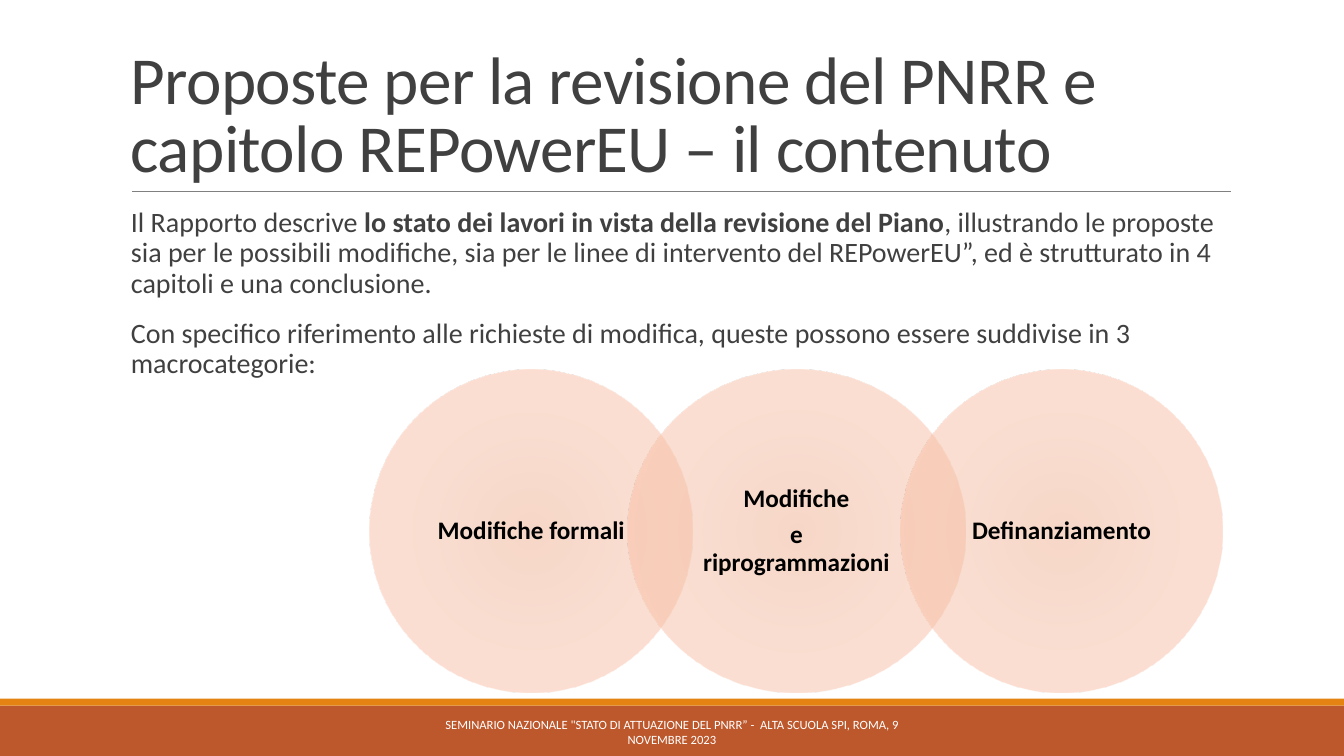
"""Build the slide on the PNRR revision proposals, with three overlapping categories."""
from math import sqrt

from lxml.etree import SubElement
from pptx import Presentation
from pptx.dml.color import RGBColor
from pptx.enum.shapes import MSO_CONNECTOR, MSO_SHAPE
from pptx.enum.text import MSO_ANCHOR, PP_ALIGN
from pptx.oxml import parse_xml
from pptx.oxml.ns import nsdecls, qn
from pptx.util import Inches, Pt

TITLE = [[("Proposte per la revisione del PNRR e capitolo REPowerEU – il contenuto", False)]]
BODY = [
    [
        ("Il Rapporto descrive ", False),
        ("lo stato dei lavori in vista della revisione del Piano", True),
        (", illustrando le proposte sia per le possibili modifiche, sia per le linee di intervento "
         "del REPowerEU”, ed è strutturato in 4 capitoli e una conclusione.", False),
    ],
    [("Con specifico riferimento alle richieste di modifica, queste possono essere suddivise "
      "in 3 macrocategorie:", False)],
]
CATEGORIES = [
    (24, ["Modifiche formali"]),
    (25.13, ["Modifiche", "e riprogrammazioni"]),
    (24, ["Definanziamento"]),
]
FOOTER = [[("SEMINARIO NAZIONALE \"STATO DI ATTUAZIONE DEL PNRR” -  ALTA SCUOLA SPI, ROMA, "
            "9 NOVEMBRE 2023", False)]]

THEME = {
    "font": "Calibri",
    "band": "BD582C",
    "accent": "E48312",
    "rule": "808080",
    "gradient": [(0, "F0B191"), (45, "F5BEA4"), (100, "FDC3A8")],
    "opacity": 50,
    "title": {"size": 48, "color": "404040", "spacing": -50},
    "body": {"size": 20, "color": "404040"},
    "label": {"size": 18, "color": "000000"},
    "footer": {"size": 9, "color": "FFFFFF"},
}
FORMATS = {
    "title": {"line_spacing": 0.85},
    "body": {"line_spacing": 0.9, "space_before": Pt(12), "space_after": Pt(2)},
    "label": {"line_spacing": 0.9, "space_after": Pt(6.3), "alignment": PP_ALIGN.CENTER},
    "footer": {"alignment": PP_ALIGN.CENTER},
}
FRAMES = {
    "title": {"vertical_anchor": MSO_ANCHOR.BOTTOM},
    "body": {"vertical_anchor": MSO_ANCHOR.TOP},
    "label": {"vertical_anchor": MSO_ANCHOR.MIDDLE, "margin_left": Inches(0.18),
              "margin_right": Inches(0.18), "margin_top": Inches(0.03),
              "margin_bottom": Inches(0.03)},
    "footer": {"vertical_anchor": MSO_ANCHOR.MIDDLE},
}

PLACES = {
    "title": (9, 4.13, 82.5, 21.2),
    "body": (9, 26.93, 82.5, 58.67),
    "footer": (30.23, 94.13, 39.53, 5.33),
}
BANDS = [("band", (0, 93.33, 100, 6.67)), ("accent", (0, 92.4, 100, 0.93))]
RULE = (9.83, 25.33, 91.58, 25.33)
FIRST_CENTRE, CENTRE_STEP, CENTRE_ROW, CIRCLE_HEIGHT = 39.53, 19.73, 70.27, 42.67

deck = Presentation()
deck.slide_width, deck.slide_height = Inches(13.33), Inches(7.5)
page = deck.slides.add_slide(deck.slide_layouts[6])


def to_lengths(shares):
    """Turn alternating percentages of slide width and height into lengths."""
    sides = (deck.slide_width, deck.slide_height) * 2
    return [round(share * side / 100) for share, side in zip(shares, sides)]


def centred(column, row, width, height):
    """Return the place of a box around a centre point."""
    return column - width / 2, row - height / 2, width, height


def apply_format(target, values):
    """Set every attribute in a dict of format values."""
    for name, value in values.items():
        setattr(target, name, value)


def add_plain_shape(kind, place):
    """Add a shape without line or shadow."""
    shape = page.shapes.add_shape(kind, *to_lengths(place))
    shape.shadow.inherit = False
    shape.line.fill.background()
    return shape


def add_text(style, place, paragraphs):
    """Add a text box in one of the theme's text styles."""
    frame = page.shapes.add_textbox(*to_lengths(place)).text_frame
    apply_format(frame, {"word_wrap": True, **FRAMES[style]})
    look = THEME[style]
    for index, spans in enumerate(paragraphs):
        para = frame.add_paragraph() if index else frame.paragraphs[0]
        apply_format(para, FORMATS[style])
        for text, bold in spans:
            span = para.add_run()
            span.text = text
            apply_format(span.font, {"name": THEME["font"], "size": Pt(look["size"]), "bold": bold})
            span.font.color.rgb = RGBColor.from_string(look["color"])
            if "spacing" in look:
                span.font._element.set("spc", str(look["spacing"]))


def fill_radially(shape):
    """Give a shape the translucent circular gradient."""
    stops = "".join(
        f'<a:gs pos="{position * 1000}"><a:srgbClr val="{color}">'
        f'<a:alpha val="{THEME["opacity"] * 1000}"/></a:srgbClr></a:gs>'
        for position, color in THEME["gradient"]
    )
    gradient = parse_xml(
        f'<a:gradFill {nsdecls("a")} rotWithShape="1"><a:gsLst>{stops}</a:gsLst>'
        '<a:path path="circle"><a:fillToRect l="100000" t="100000" r="100000" b="100000"/>'
        '</a:path></a:gradFill>'
    )
    shape._element.spPr.find(qn("a:prstGeom")).addnext(gradient)


for color, place in BANDS:
    band = add_plain_shape(MSO_SHAPE.RECTANGLE, place)
    band.fill.solid()
    band.fill.fore_color.rgb = RGBColor.from_string(THEME[color])

rule = page.shapes.add_connector(MSO_CONNECTOR.STRAIGHT, *to_lengths(RULE))
rule.line.width = Pt(0.5)
rule.line.color.rgb = RGBColor.from_string(THEME["rule"])
SubElement(rule._element.spPr, qn("a:effectLst"))

add_text("title", PLACES["title"], TITLE)
add_text("body", PLACES["body"], BODY)

for index, (width, lines) in enumerate(CATEGORIES):
    centre = FIRST_CENTRE + index * CENTRE_STEP
    fill_radially(add_plain_shape(
        MSO_SHAPE.OVAL, centred(centre, CENTRE_ROW, width, CIRCLE_HEIGHT)))
    inscribed = centred(centre, CENTRE_ROW, width / sqrt(2), CIRCLE_HEIGHT / sqrt(2))
    add_text("label", inscribed, [[(line, True)] for line in lines])

add_text("footer", PLACES["footer"], FOOTER)

deck.save("out.pptx")
